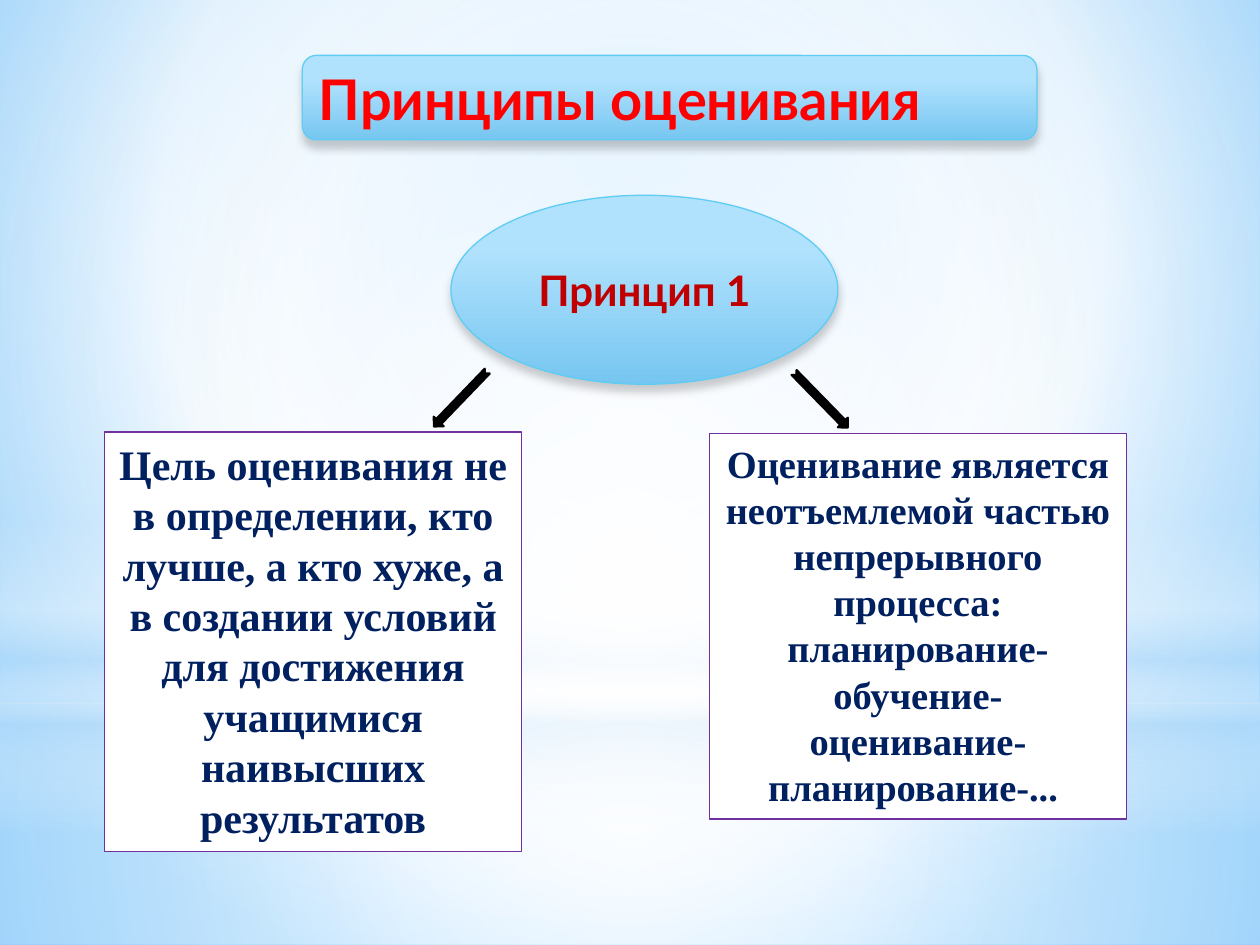
"""Build the slide on assessment principles."""
from lxml.etree import SubElement
from pptx import Presentation
from pptx.dml.color import RGBColor
from pptx.enum.shapes import MSO_SHAPE
from pptx.enum.text import MSO_ANCHOR, MSO_AUTO_SIZE, PP_ALIGN
from pptx.oxml.ns import qn
from pptx.util import Inches, Pt

WHITE = RGBColor(0xFF, 0xFF, 0xFF)
BLACK = RGBColor(0, 0, 0)
RED = RGBColor(0xFF, 0, 0)
DARK = RGBColor(0xC0, 0, 0)
NAVY = RGBColor(0, 0x20, 0x60)
PURPLE = RGBColor(0x70, 0x30, 0xA0)
CYAN = RGBColor(0x5E, 0xCC, 0xF3)
PALE = RGBColor(0xB4, 0xDC, 0xFA)
LIGHT = RGBColor(0xB1, 0xE2, 0xFD)
SKY = RGBColor(0x76, 0xC6, 0xF1)
EDGE = RGBColor(0x9E, 0xD5, 0xFF)
BLUE = RGBColor(0x5B, 0xB9, 0xFF)


def blend(fill, root, stops, focus=None):
    fill.gradient()
    grad = root.find(".//" + qn("a:gradFill"))
    for child in list(grad):
        grad.remove(child)
    items = SubElement(grad, qn("a:gsLst"))
    for place, color, alpha in stops:
        stop = SubElement(items, qn("a:gs"), pos=str(place * 1000))
        tint = SubElement(stop, qn("a:srgbClr"), val=str(color))
        if alpha < 100:
            SubElement(tint, qn("a:alpha"), val=str(alpha * 1000))
    if focus:
        way = SubElement(grad, qn("a:path"), path="circle")
        sides = {side: str(n * 1000) for side, n in zip("ltrb", focus)}
        SubElement(way, qn("a:fillToRect"), **sides)
    else:
        SubElement(grad, qn("a:lin"), ang="5400000", scaled="0")


def write(shape, text, size, face, color, align):
    para = shape.text_frame.paragraphs[0]
    para.alignment = align
    run = para.add_run()
    run.text = text
    run.font.size = Pt(size)
    run.font.name = face
    run.font.bold = True
    run.font.color.rgb = color


deck = Presentation()
deck.slide_width, deck.slide_height = Inches(10), Inches(7.5)
slide = deck.slides.add_slide(deck.slide_layouts[5])
shapes = slide.shapes
title = shapes.title
blend(slide.background.fill, slide.element,
      [(0, EDGE, 100), (60, WHITE, 100), (100, BLUE, 100)], (20, 10, 20, 60))

MID = (50, 50, 50, 50)
layers = [
    (MSO_SHAPE.RECTANGLE, 5.58, 1.92, MID,
     [(0, WHITE, 91), (37, WHITE, 76), (100, PALE, 79)]),
    (MSO_SHAPE.RECTANGLE, 0, 5.58, MID,
     [(0, WHITE, 89), (48, WHITE, 62), (100, PALE, 79)]),
    (MSO_SHAPE.RECTANGLE, 4.12, 2.5, None,
     [(0, WHITE, 0), (29, WHITE, 30), (45, PALE, 40),
      (55, WHITE, 26), (65, PALE, 60), (100, WHITE, 0)]),
    (MSO_SHAPE.OVAL, 1.75, 5.58, MID, [(0, WHITE, 100), (56, WHITE, 0)]),
]
for kind, top, height, focus, stops in layers:
    layer = shapes.add_shape(kind, 0, Inches(top), Inches(10), Inches(height))
    layer.shadow.inherit = False
    layer.line.fill.background()
    blend(layer.fill, layer.element.spPr, stops, focus)

panel = shapes.add_shape(MSO_SHAPE.ROUNDED_RECTANGLE, Inches(2.4),
                         Inches(0.44), Inches(5.83), Inches(0.67))
oval = shapes.add_shape(MSO_SHAPE.OVAL, Inches(3.58), Inches(1.55),
                        Inches(3.07), Inches(1.5))
for shape in (panel, oval):
    blend(shape.fill, shape.element.spPr, [(28, LIGHT, 100), (100, SKY, 100)])
    shape.line.color.rgb = CYAN
    shape.line.width = Pt(0.75)
    shape.shadow.inherit = False
    effect = shape.element.spPr.find(qn("a:effectLst"))
    shade = SubElement(effect, qn("a:outerShdw"), blurRad=str(Pt(5)),
                       dist=str(Pt(4)), dir="5400000", rotWithShape="0")
    tint = SubElement(shade, qn("a:srgbClr"), val=str(BLACK))
    SubElement(tint, qn("a:alpha"), val="20000")

title.left, title.top = panel.left, panel.top
title.width, title.height = panel.width, panel.height
title.text_frame.margin_left = Inches(0.13)
title.text_frame.auto_size = MSO_AUTO_SIZE.NONE
title.text_frame.vertical_anchor = MSO_ANCHOR.MIDDLE
panel.element.addnext(title.element)
write(title, "Принципы оценивания", 32, "Lato", RED, PP_ALIGN.LEFT)
oval.text_frame.vertical_anchor = MSO_ANCHOR.MIDDLE
write(oval, "Принцип 1", 24, "Lato", DARK, PP_ALIGN.CENTER)

cards = [
    (0.83, 3.43, 3.33, 24,
     "Цель оценивания не в определении, кто лучше, а кто хуже, а в создании "
     "условий для достижения учащимися наивысших результатов"),
    (5.63, 3.44, 3.06, 22,
     "Оценивание является неотъемлемой частью непрерывного процесса: "
     "планирование-обучение- оценивание-планирование-... "),
]
for left, top, height, size, text in cards:
    card = shapes.add_textbox(Inches(left), Inches(top),
                              Inches(3.31), Inches(height))
    card.fill.solid()
    card.fill.fore_color.rgb = WHITE
    card.line.color.rgb = PURPLE
    card.line.width = Pt(0.75)
    card.text_frame.word_wrap = True
    card.text_frame.auto_size = MSO_AUTO_SIZE.SHAPE_TO_FIT_TEXT
    write(card, text, size, "Times New Roman", NAVY, PP_ALIGN.CENTER)

for left, top, turn in [(6.21, 3.12, 45.7), (3.35, 3.11, 133.9)]:
    arrow = shapes.add_shape(MSO_SHAPE.NOTCHED_RIGHT_ARROW, Inches(left),
                             Inches(top), Inches(0.61), Inches(0.11))
    arrow.rotation = turn
    arrow.shadow.inherit = False
    arrow.fill.solid()
    arrow.fill.fore_color.rgb = BLACK
    arrow.line.color.rgb = BLACK
    arrow.line.width = Pt(1.25)

deck.save("out.pptx")
